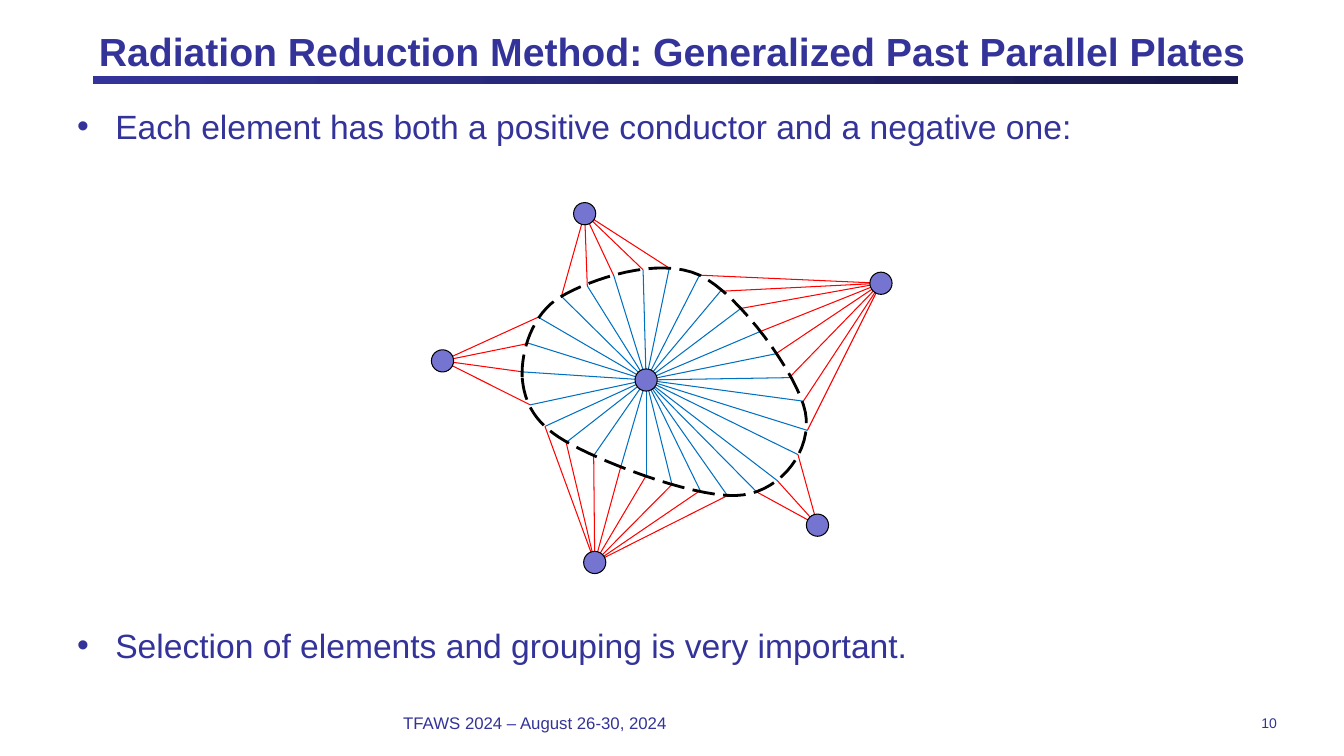
from lxml.etree import SubElement
from pptx import Presentation
from pptx.dml.color import RGBColor
from pptx.enum.dml import MSO_LINE
from pptx.enum.shapes import MSO_CONNECTOR, MSO_SHAPE
from pptx.enum.text import MSO_ANCHOR, PP_ALIGN
from pptx.oxml.ns import qn
from pptx.util import Emu, Inches, Pt

THEME = {
    "font": "Arial",
    "ink": RGBColor.from_string("333399"),
    "rule_end": RGBColor.from_string("171747"),
    "node": RGBColor.from_string("7575D1"),
    "outline": RGBColor.from_string("000000"),
    "positive": RGBColor.from_string("0070C0"),
    "negative": RGBColor.from_string("FF0000"),
    "title": Pt(28), "body": Pt(24), "footer": Pt(12), "number": Pt(10),
    "thin": Pt(0.75), "thick": Pt(2),
}

deck = Presentation()
deck.slide_width, deck.slide_height = Inches(40 / 3), Inches(7.5)
page = deck.slides.add_slide(deck.slide_layouts[6])
CELL = deck.slide_width / 40  # the slide is 40 columns by 22.5 rows


def cells(*counts):
    return [Emu(round(count * CELL)) for count in counts]


def add_text(area, lines, size, inset=(0, 0), align=PP_ALIGN.LEFT,
             anchor=MSO_ANCHOR.MIDDLE, bold=False, bullet_gap=None):
    """Add a text box; a bullet_gap bullets its lines and sets them apart."""
    box = page.shapes.add_textbox(*cells(*area))
    frame = box.text_frame
    frame.word_wrap = True
    frame.vertical_anchor = anchor
    frame.margin_left = frame.margin_right = Inches(inset[0])
    frame.margin_top = frame.margin_bottom = Inches(inset[1])
    for index, line in enumerate(lines):
        para = frame.paragraphs[0] if index == 0 else frame.add_paragraph()
        para.alignment = align
        if bullet_gap:
            props = para._p.get_or_add_pPr()
            props.set("marL", str(Inches(0.38)))
            props.set("indent", str(-Inches(0.38)))
            if index:
                para.space_before = bullet_gap
            SubElement(props, qn("a:buFont"), typeface=THEME["font"])
            SubElement(props, qn("a:buChar"), char="•")
        span = para.add_run()
        span.text = line
        span.font.name = THEME["font"]
        span.font.size = size
        span.font.bold = bold
        span.font.color.rgb = THEME["ink"]


# Heading, bullets and footer
rule = page.shapes.add_shape(MSO_SHAPE.RECTANGLE, *cells(2.76, 2.26, 34.1, 0.24))
rule.shadow.inherit = False
rule.line.fill.background()
rule.fill.gradient()
rule.fill.gradient_angle = 0
for stop, name, place in zip(rule.fill.gradient_stops, ("ink", "rule_end"), (0, 1)):
    stop.color.rgb = THEME[name]
    stop.position = place

add_text((2, 0.63, 36, 1.74),
         ["Radiation Reduction Method: Generalized Past Parallel Plates"],
         THEME["title"], inset=(0.1, 0), align=PP_ALIGN.CENTER, bold=True)
add_text((2, 3, 36, 17.75),
         ["Each element has both a positive conductor and a negative one:",
          "Selection of elements and grouping is very important."],
         THEME["body"], inset=(0.1, 0.05), anchor=MSO_ANCHOR.TOP, bullet_gap=Pt(342))
add_text((29.67, 21, 8.33, 1), ["10"], THEME["number"], align=PP_ALIGN.RIGHT)
add_text((12, 21, 16, 1), ["TFAWS 2024 – August 26-30, 2024"], THEME["footer"])

# Each outer node owns a group of elements on the rim of the centre node
CENTRE = (19.23, 11.31)
GROUPS = {
    (13.17, 10.74): [(16.02, 9.44), (15.74, 10.22), (15.57, 11.07), (15.78, 12.05)],
    (17.7, 16.74): [(16.22, 12.69), (16.85, 13.17), (17.67, 13.56), (18.47, 13.92),
                    (19.23, 14.16), (20, 14.42), (20.84, 14.6), (21.65, 14.75)],
    (24.33, 15.63): [(22.52, 14.64), (23.13, 14.3), (23.75, 13.53)],
    (26.22, 8.43): [(24.03, 12.81), (23.91, 11.94), (23.49, 11.24), (23.09, 10.53),
                    (22.62, 9.87), (22.05, 9.18), (21.44, 8.67), (20.82, 8.19)],
    (17.4, 6.36): [(19.92, 7.98), (19.14, 8.03), (18.27, 8.21), (17.48, 8.51),
                   (16.71, 8.82)],
}
for outer, elements in GROUPS.items():
    for element in elements:
        for node, sign in ((CENTRE, "positive"), (outer, "negative")):
            conductor = page.shapes.add_connector(
                MSO_CONNECTOR.STRAIGHT, *cells(*element, *node))
            conductor.line.color.rgb = THEME[sign]
            conductor.line.width = THEME["thin"]
            SubElement(conductor._element.spPr, qn("a:effectLst"))

DIAMETER = 0.66
for x, y in [CENTRE, *GROUPS]:
    node = page.shapes.add_shape(MSO_SHAPE.OVAL, *cells(
        x - DIAMETER / 2, y - DIAMETER / 2, DIAMETER, DIAMETER))
    node.shadow.inherit = False
    node.fill.solid()
    node.fill.fore_color.rgb = THEME["node"]
    node.line.color.rgb = THEME["outline"]
    node.line.width = THEME["thin"]

# The rim is a closed chain of cubic curves: two handles and an end point each
RIM_START = (15.54, 11.22)
RIM_CURVES = [
    ((15.51, 10.5), (15.81, 9.33), (16.71, 8.82)),
    ((17.58, 8.31), (19.59, 7.62), (20.82, 8.19)),
    ((22.02, 8.76), (23.76, 11.19), (23.97, 12.27)),
    ((24.18, 13.38), (23.28, 14.58), (22.11, 14.73)),
    ((20.94, 14.91), (18.09, 13.83), (17.01, 13.23)),
    ((15.9, 12.66), (15.6, 11.97), RIM_START),
]
STEPS = 16
rim_points = []
start = RIM_START
for first, second, end in RIM_CURVES:
    for step in range(1, STEPS + 1):
        t = step / STEPS
        weights = ((1 - t) ** 3, 3 * t * (1 - t) ** 2, 3 * t ** 2 * (1 - t), t ** 3)
        corners = (start, first, second, end)
        rim_points.append(cells(*(
            sum(weight * corner[axis] for weight, corner in zip(weights, corners))
            for axis in (0, 1))))
    start = end
outline = page.shapes.build_freeform(*cells(*RIM_START))
outline.add_line_segments(rim_points, close=True)
rim = outline.convert_to_shape()
rim.shadow.inherit = False
rim.fill.background()
rim.line.color.rgb = THEME["outline"]
rim.line.width = THEME["thick"]
rim.line.dash_style = MSO_LINE.LONG_DASH

deck.save("out.pptx")
